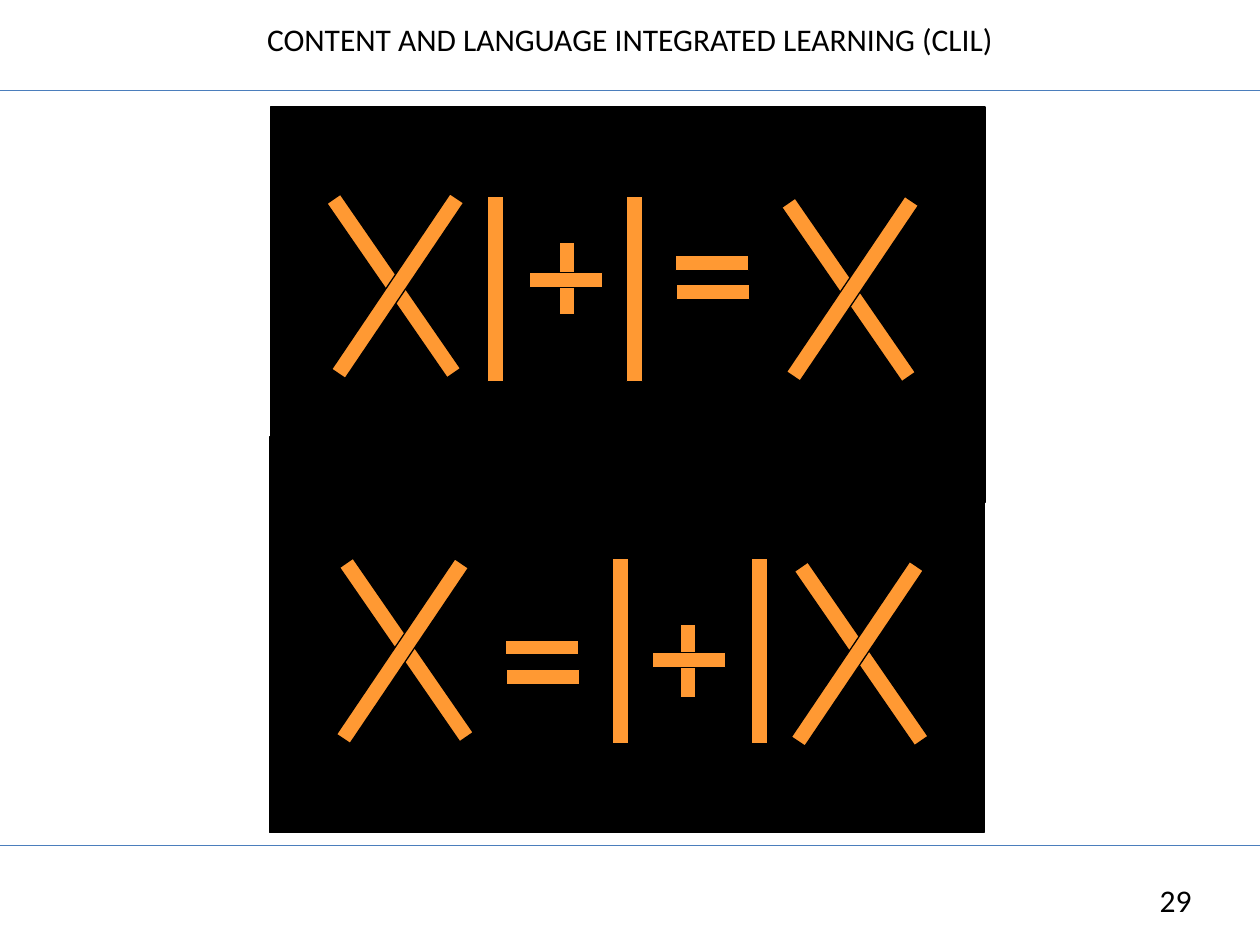
import lxml.etree
import pptx
import pptx.dml.color
import pptx.enum.shapes
import pptx.enum.text
import pptx.oxml.ns
import pptx.util

Pt = pptx.util.Pt
BLACK, ORANGE, BLUE = "000000", "FF9933", "4B7EBC"
LONG, TALL, SHORT = 121, 105.8, 41.8
THICK, THIN = 9.4, 8.6
LEANS = (-34.6, 214)


def colour(value):
    return pptx.dml.color.RGBColor.from_string(value)


def write(shape, text, size=18, font="Calibri", fill=BLACK):
    frame = shape.text_frame
    frame.word_wrap = True
    frame.auto_size = pptx.enum.text.MSO_AUTO_SIZE.NONE
    frame.vertical_anchor = pptx.enum.text.MSO_ANCHOR.TOP
    frame.margin_left = frame.margin_right = Pt(7.2)
    frame.margin_top = frame.margin_bottom = Pt(3.6)
    para = frame.paragraphs[0]
    para.alignment = pptx.enum.text.PP_ALIGN.CENTER
    span = para.add_run()
    span.text = text
    span.font.size = Pt(size)
    span.font.name = font
    span.font.color.rgb = colour(fill)


def rectangle(shapes, centre, width, height, fill, angle=0):
    x, y = centre
    shape = shapes.add_shape(
        pptx.enum.shapes.MSO_SHAPE.RECTANGLE,
        Pt(x - width / 2), Pt(y - height / 2), Pt(width), Pt(height))
    shape.rotation = angle % 360
    shape.shadow.inherit = False
    shape.fill.solid()
    shape.fill.fore_color.rgb = colour(fill)
    shape.line.color.rgb = colour(BLACK)
    shape.line.width = Pt(0.75)


def rule(page, left, right, y):
    line = page.shapes.add_connector(
        pptx.enum.shapes.MSO_CONNECTOR.STRAIGHT, Pt(left), Pt(y), Pt(right), Pt(y))
    line.line.color.rgb = colour(BLUE)
    line.line.width = Pt(0.75)
    lxml.etree.SubElement(line._element.spPr, pptx.oxml.ns.qn("a:effectLst"))


def cross(x, y, step):
    """Two leaning sticks, the second shifted slightly by step."""
    return [(x, y, THICK, LONG, LEANS[0]),
            (x + 2.2, y + step, THICK, LONG, LEANS[1])]


def upright(x, y):
    return [(x, y, THICK, TALL, 180)]


def plus(x, y):
    return [(x, y, THIN, SHORT, 180), (x - 0.7, y + 0.7, THIN, SHORT, 90)]


def equals(x, y):
    return [(x, y, THIN, SHORT, 90), (x + 0.5, y + 16.6, THIN, SHORT, 90)]


# Sticks as offsets from the panel centre: x, y, width, height, angle
EQUATION = (cross(-133.9, -10.8, 0) + upright(-75.6, -9) + plus(-34.9, -15.1)
            + upright(3.6, -9) + equals(48, -23.8) + cross(126, -8.6, -0.7))


def matchstick_panel(page, left, top, width, height, upside_down=False):
    shapes = page.shapes.add_group_shape().shapes
    x, y = left + width / 2, top + height / 2
    sign, turn = (-1, 180) if upside_down else (1, 0)
    rectangle(shapes, (x, y), width, height, BLACK)
    for across, down, thickness, length, angle in EQUATION:
        rectangle(shapes, (x + sign * across, y + sign * down),
                  thickness, length, ORANGE, angle + turn)


def header(page, left, top, width, height):
    title = page.shapes.title
    title.left, title.top = Pt(left), Pt(top)
    title.width, title.height = Pt(width), Pt(height)
    write(title, "CONTENT AND LANGUAGE INTEGRATED LEARNING (CLIL)")
    rule(page, -3.6, 722.2, top + 43.9)


def footer(page, left, top, width, height):
    box = page.shapes.add_textbox(Pt(left), Pt(top), Pt(width), Pt(height))
    write(box, "29")
    rule(page, -2.2, 723.6, top - 16.6)


def main():
    deck = pptx.Presentation()
    deck.slide_width, deck.slide_height = Pt(720), Pt(540)
    page = deck.slides.add_slide(deck.slide_layouts.get_by_name("Title Only"))
    header(page, 115.9, 7.9, 488.2, 28.8)
    footer(page, 625.7, 499.7, 92.2, 28.8)
    matchstick_panel(page, 154.8, 61.2, 408.2, 226.1)
    matchstick_panel(page, 154.1, 249.8, 408.2, 226.1, upside_down=True)
    deck.save("out.pptx")


if __name__ == "__main__":
    main()
